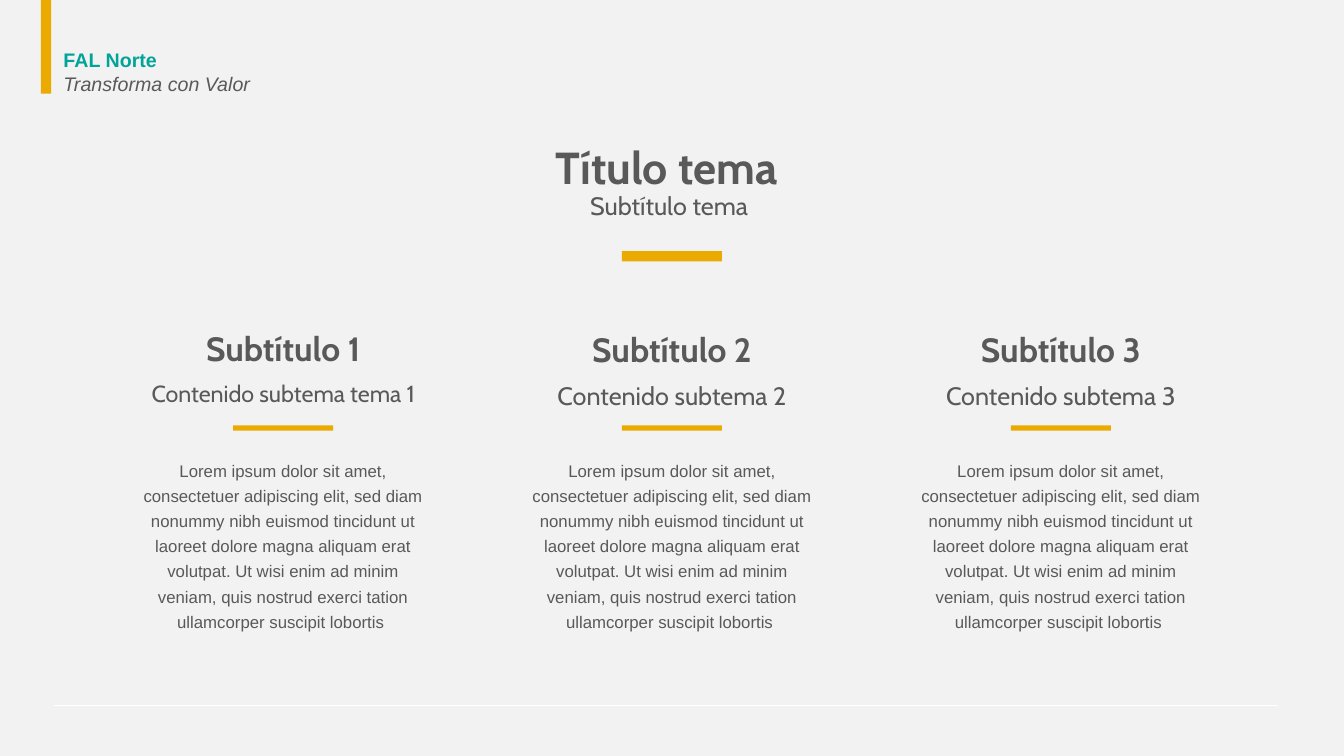
import pptx
import pptx.util
import pptx.dml.color
import pptx.enum.shapes
import pptx.enum.text
import lxml.etree
from pptx.util import Cm, Pt

COLORS = {"background": "F2F2F2", "text": "595959", "gold": "EAAA00",
          "teal": "00A499", "rule": "FFFFFF"}
TITLE = "Título tema "
SUBTITLE = "Subtítulo tema "
BRAND = "FAL Norte"
SLOGAN = "Transforma con Valor"
BODY = ("Lorem ipsum dolor sit amet, consectetuer adipiscing elit, sed diam "
        "nonummy nibh euismod tincidunt ut laoreet dolore magna aliquam erat "
        "volutpat. Ut wisi enim ad minim veniam, quis nostrud exerci tation "
        "ullamcorper suscipit lobortis ")
TOPICS = [
    {"heading": "Subtítulo 1", "content": "Contenido subtema tema 1",
     "size": 16.6, "width": 8.51, "top": 8.33},
    {"heading": "Subtítulo 2", "content": "Contenido subtema 2",
     "size": 18, "width": 6.55, "top": 8.36},
    {"heading": "Subtítulo 3", "content": "Contenido subtema 3",
     "size": 18, "width": 6.55, "top": 8.36},
]
SLIDE_WIDTH, SLIDE_HEIGHT = 33.87, 19.05
CENTER = SLIDE_WIDTH / 2
TOPIC_PITCH = 9.8
LINE_HEIGHT = 0.89
BAR_WIDTH = 2.52
MIDDLE = pptx.enum.text.MSO_ANCHOR.MIDDLE
TOP = pptx.enum.text.MSO_ANCHOR.TOP


def rgb(name):
    return pptx.dml.color.RGBColor.from_string(COLORS[name])


def style(paragraph, size, font="Cabin", color="text", bold=False, italic=False):
    for run in paragraph.runs:
        run.font.size = Pt(size)
        run.font.name = font
        run.font.color.rgb = rgb(color)
        run.font.bold = bold
        run.font.italic = italic


def add_centered(slide, text, center, top, width, height, size, font="Cabin",
                 bold=False, anchor=TOP, spacing=None, before=None):
    frame = slide.shapes.add_textbox(
        Cm(center - width / 2), Cm(top), Cm(width), Cm(height)).text_frame
    frame.word_wrap = True
    frame.vertical_anchor = anchor
    frame.text = text
    paragraph = frame.paragraphs[0]
    paragraph.alignment = pptx.enum.text.PP_ALIGN.CENTER
    if spacing:
        paragraph.line_spacing = spacing
    if before:
        paragraph.space_before = Pt(before)
    style(paragraph, size, font, bold=bold)


def add_heading(slide, text, center, top, width, size):
    add_centered(slide, text, center, top, width, LINE_HEIGHT, size,
                 bold=True, anchor=MIDDLE)


def add_subheading(slide, text, center, top, width, size):
    add_centered(slide, text, center, top, width, LINE_HEIGHT, size,
                 spacing=0.8, before=10)


def add_bar(slide, left, top, width, height):
    bar = slide.shapes.add_shape(
        pptx.enum.shapes.MSO_SHAPE.RECTANGLE, Cm(left), Cm(top), Cm(width), Cm(height))
    bar.shadow.inherit = False
    bar.fill.solid()
    bar.fill.fore_color.rgb = rgb("gold")
    bar.line.fill.background()


def add_brand(slide):
    frame = slide.shapes.add_textbox(Cm(1.35), Cm(1.09), Cm(5.23), Cm(1.45)).text_frame
    frame.word_wrap = False
    frame.text = BRAND
    style(frame.paragraphs[0], 14, "Arial", "teal", bold=True)
    slogan = frame.add_paragraph()
    slogan.text = SLOGAN
    style(slogan, 14, "Arial", italic=True)


def add_footer_rule(slide):
    rule = slide.shapes.add_connector(
        pptx.enum.shapes.MSO_CONNECTOR.STRAIGHT, Cm(1.35), Cm(17.78), Cm(32.2), Cm(17.78))
    rule.line.color.rgb = rgb("rule")
    rule.line.width = Pt(0.5)
    lxml.etree.SubElement(rule._element.spPr, pptx.oxml.ns.qn("a:effectLst"))


def main():
    presentation = pptx.Presentation()
    presentation.slide_width = Cm(SLIDE_WIDTH)
    presentation.slide_height = Cm(SLIDE_HEIGHT)
    slide = presentation.slides.add_slide(presentation.slide_layouts[6])
    slide.background.fill.solid()
    slide.background.fill.fore_color.rgb = rgb("background")

    add_heading(slide, TITLE, CENTER, 3.76, 9.55, 32)
    add_subheading(slide, SUBTITLE, CENTER, 4.83, 9.55, 18)
    add_bar(slide, CENTER - BAR_WIDTH / 2, 6.33, BAR_WIDTH, 0.26)

    for index, topic in enumerate(TOPICS):
        center = CENTER + (index - 1) * TOPIC_PITCH
        add_heading(slide, topic["heading"], center, topic["top"], 6.55, 24)
        add_subheading(slide, topic["content"], center, topic["top"] + 1.24,
                       topic["width"], topic["size"])
        add_bar(slide, center - BAR_WIDTH / 2, 10.72, BAR_WIDTH, 0.13)
        add_centered(slide, BODY, center, 11.35, 7.7, 4.67, 12, "Arial", spacing=Pt(18))

    add_footer_rule(slide)
    add_brand(slide)
    add_bar(slide, 1.03, 0, 0.26, 2.36)
    presentation.save("out.pptx")


if __name__ == "__main__":
    main()
